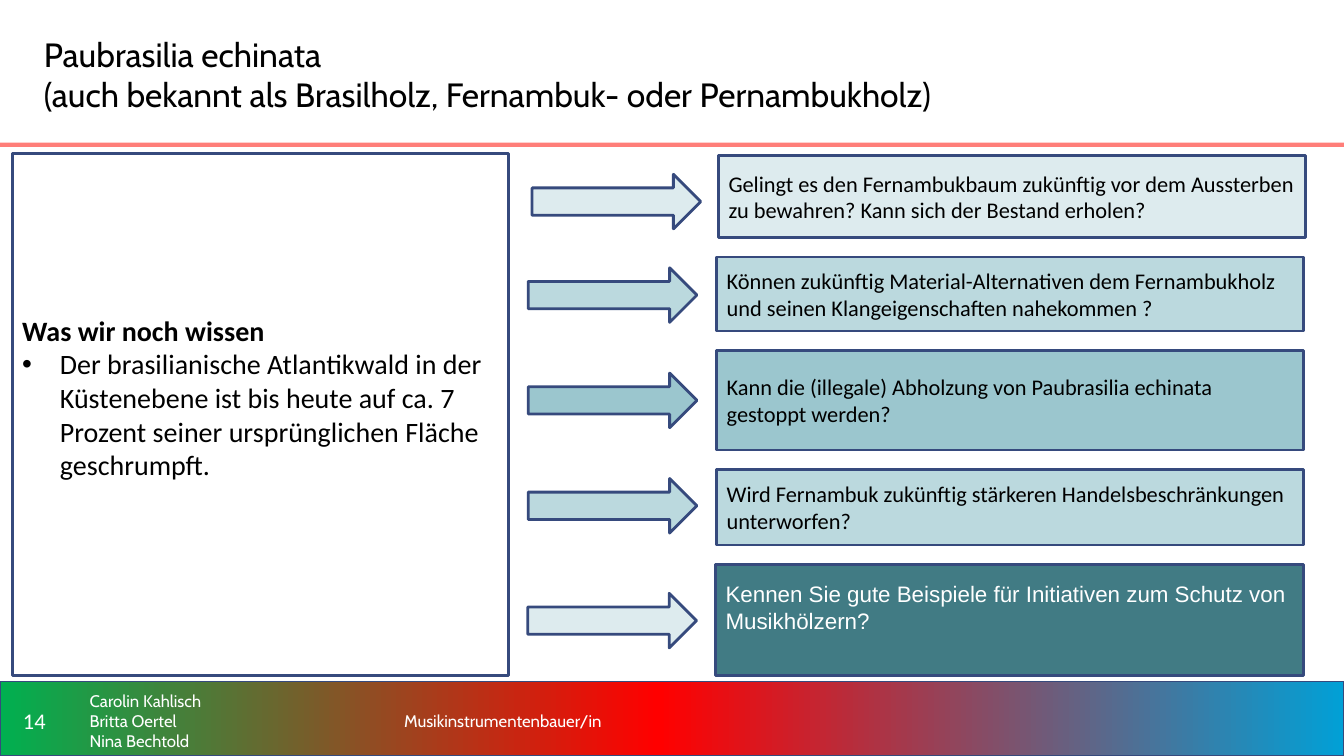
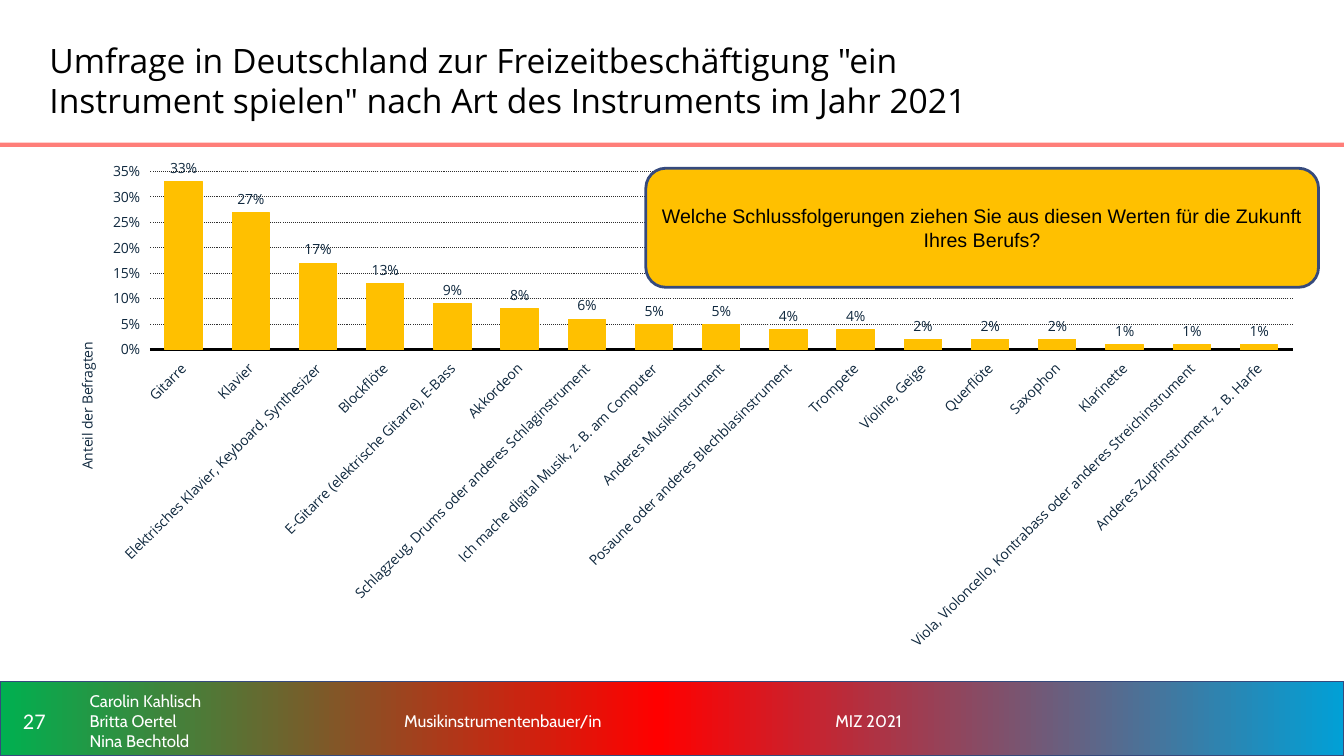
"""Build two slides on pernambuco wood and on instrument playing in Germany."""
from copy import deepcopy
from dataclasses import dataclass
from typing import Optional

from lxml import etree
from pptx import Presentation
from pptx import util as u
from pptx.chart import data as chart_data
from pptx.dml.color import RGBColor
from pptx.enum import chart as chart_enum
from pptx.enum import dml, shapes, text
from pptx.oxml import ns

WHITE = RGBColor(0xFF, 0xFF, 0xFF)
BLACK = RGBColor(0, 0, 0)
NAVY = RGBColor(0x36, 0x4A, 0x7D)
INK = RGBColor(0x0F, 0x28, 0x3E)
GRID = RGBColor(0x2F, 0x2F, 0x2F)
CORAL = RGBColor(0xFF, 0x7E, 0x79)
GREEN = RGBColor(0x00, 0xB0, 0x50)
RED = RGBColor(0xFF, 0x00, 0x00)
BLUE = RGBColor(0x01, 0xA0, 0xD6)
AMBER = RGBColor(0xFF, 0xC0, 0x00)
PALE = RGBColor(0xDD, 0xEB, 0xEE)
LIGHT = RGBColor(0xBB, 0xD9, 0xDE)
MEDIUM = RGBColor(0x9B, 0xC6, 0xCE)
DEEP = RGBColor(0x41, 0x7B, 0x84)

SLIDE_WIDTH, SLIDE_HEIGHT = 960, 540
FOOTER_TOP, FOOTER_HEIGHT = 492.5, 44
AUTHORS = ("Carolin Kahlisch", "Britta Oertel", "Nina Bechtold")
SHAPE = shapes.MSO_SHAPE
ALIGN = text.PP_ALIGN


@dataclass(frozen=True)
class Box:
    left: float
    top: float
    width: float
    height: float

    def lengths(self) -> tuple:
        return tuple(u.Pt(n) for n in (self.left, self.top, self.width, self.height))


@dataclass(frozen=True)
class Style:
    font: str
    size: float
    color: RGBColor = BLACK
    align: ALIGN = ALIGN.LEFT
    bold: bool = False


@dataclass(frozen=True)
class Question:
    wording: str
    box: Box
    arrow_left: float
    arrow_top: float
    fill: RGBColor
    arrow_fill: RGBColor
    style: Style = Style("Calibri", 16)
    bottom_inset: float = 3.6


FOOTER = Style("Cabin", 12, WHITE)
AXIS = Style("Open Sans", 10, INK)

QUESTIONS = (
    Question("Gelingt es den Fernambukbaum zukünftig vor dem Aussterben zu bewahren? Kann sich der Bestand erholen?",
             Box(513.3, 110.9, 419, 59), 380, 124.5, PALE, PALE),
    Question("Können zukünftig Material-Alternativen dem Fernambukholz und seinen Klangeigenschaften nahekommen ?",
             Box(512, 183.6, 419, 52.8), 377.3, 191.3, LIGHT, LIGHT),
    Question("Kann die (illegale) Abholzung von Paubrasilia echinata gestoppt werden?",
             Box(512, 250.5, 419, 71), 377.3, 266.5, MEDIUM, MEDIUM),
    Question("Wird Fernambuk zukünftig stärkeren Handelsbeschränkungen unterworfen?",
             Box(512, 335.3, 419, 54), 377.3, 341.8, LIGHT, LIGHT),
    Question("Kennen Sie gute Beispiele für Initiativen zum Schutz von Musikhölzern?",
             Box(511.2, 403.5, 419.8, 78.8), 377, 423.8, DEEP, PALE, Style("Arial", 16, WHITE), 22),
)

SHARES = {
    "Gitarre": 0.33,
    "Klavier": 0.27,
    "Elektrisches Klavier, Keyboard, Synthesizer": 0.17,
    "Blockflöte": 0.13,
    "E-Gitarre (elektrische Gitarre), E-Bass": 0.09,
    "Akkordeon": 0.08,
    "Schlagzeug, Drums oder anderes Schlaginstrument": 0.06,
    "Ich mache digital Musik, z. B. am Computer": 0.05,
    "Anderes Musikinstrument": 0.05,
    "Posaune oder anderes Blechblasinstrument": 0.04,
    "Trompete": 0.04,
    "Violine, Geige": 0.02,
    "Querflöte": 0.02,
    "Saxophon": 0.02,
    "Klarinette": 0.01,
    "Viola, Violoncello, Kontrabass oder anderes Streichinstrument": 0.01,
    "Anderes Zupfinstrument, z. B. Harfe": 0.01,
}


def set_font(font, style: Style) -> None:
    font.name, font.size, font.bold = style.font, u.Pt(style.size), style.bold
    font.color.rgb = style.color


def write(paragraph, wording: str, style: Style) -> None:
    paragraph.text = wording
    paragraph.alignment = style.align
    set_font(paragraph.font, style)


def hang(paragraph, left: float, first: float, bullet: Optional[str] = None) -> None:
    properties = paragraph._p.get_or_add_pPr()
    properties.set("marL", str(u.Pt(left)))
    properties.set("indent", str(u.Pt(first)))
    if bullet:
        etree.SubElement(properties, ns.qn("a:buFont")).set("typeface", "Arial")
        etree.SubElement(properties, ns.qn("a:buChar")).set("char", bullet)


def add_text(slide, box: Box, lines: tuple, style: Style):
    frame = slide.shapes.add_textbox(*box.lengths()).text_frame
    frame.word_wrap = True
    frame.vertical_anchor = text.MSO_ANCHOR.MIDDLE
    for index, line in enumerate(lines):
        write(frame.add_paragraph() if index else frame.paragraphs[0], line, style)
    return frame


def add_panel(slide, kind: SHAPE, box: Box, fill: Optional[RGBColor],
              line: Optional[RGBColor] = NAVY, weight: float = 2):
    shape = slide.shapes.add_shape(kind, *box.lengths())
    shape.shadow.inherit = False
    if fill is None:
        shape.fill.background()
    else:
        shape.fill.solid()
        shape.fill.fore_color.rgb = fill
    if line is None:
        shape.line.fill.background()
    else:
        shape.line.color.rgb = line
        shape.line.width = u.Pt(weight)
    shape.text_frame.word_wrap = True
    shape.text_frame.vertical_anchor = text.MSO_ANCHOR.MIDDLE
    return shape


def add_footer_band(slide) -> None:
    band = add_panel(slide, SHAPE.RECTANGLE, Box(0, 486.7, SLIDE_WIDTH, 53.3), None, NAVY, 1)
    band.fill.gradient()
    band.fill.gradient_angle = 0
    stops = band.element.spPr.find(".//" + ns.qn("a:gsLst"))
    stops.insert(1, deepcopy(stops[0]))
    for stop, position, color in zip(band.fill.gradient_stops, (0, 0.49, 1), (GREEN, RED, BLUE)):
        stop.position = position
        stop.color.rgb = color


def add_base_slide(presentation, number: int, title: str, title_box: Box, title_font: str,
                   notes: dict):
    slide = presentation.slides.add_slide(presentation.slide_layouts[6])
    add_footer_band(slide)
    add_panel(slide, SHAPE.RECTANGLE, Box(0, 102, SLIDE_WIDTH, 3), CORAL, None)
    add_text(slide, title_box, (title,), Style(title_font, 24))
    add_text(slide, Box(0, FOOTER_TOP, 49, FOOTER_HEIGHT), (str(number),),
             Style("Calibri", 16, WHITE, ALIGN.CENTER))
    add_text(slide, Box(57, FOOTER_TOP, 200, FOOTER_HEIGHT + 0.6), AUTHORS, FOOTER)
    for left, note in notes.items():
        paragraph = add_text(slide, Box(left, FOOTER_TOP, 302, FOOTER_HEIGHT), (note,), FOOTER).paragraphs[0]
        hang(paragraph, 36, -18)
        paragraph.line_spacing = 1.1
    return slide


def add_question(slide, question: Question) -> None:
    add_panel(slide, SHAPE.RIGHT_ARROW, Box(question.arrow_left, question.arrow_top, 120.5, 39),
              question.arrow_fill)
    frame = add_panel(slide, SHAPE.RECTANGLE, question.box, question.fill).text_frame
    frame.margin_bottom = u.Pt(question.bottom_inset)
    write(frame.paragraphs[0], question.wording, question.style)


def build_wood_slide(presentation) -> None:
    slide = add_base_slide(
        presentation, 14,
        "Paubrasilia echinata\n(auch bekannt als Brasilholz, Fernambuk- oder Pernambukholz)",
        Box(24.3, 10.3, 708.5, 85), "Cabin", {263.6: "Musikinstrumentenbauer/in"})
    frame = add_panel(slide, SHAPE.RECTANGLE, Box(8.7, 109.6, 354.5, 372.8), None).text_frame
    frame.margin_bottom = u.Pt(28)
    write(frame.paragraphs[0], "Was wir noch wissen", Style("Calibri", 20, bold=True))
    fact = frame.add_paragraph()
    hang(fact, 27, -27, "•")
    write(fact, "Der brasilianische Atlantikwald in der Küstenebene ist bis heute auf ca. 7 Prozent "
          "seiner ursprünglichen Fläche geschrumpft.", Style("Calibri", 20))
    for question in QUESTIONS:
        add_question(slide, question)


def set_layout(parent, index: int, **places) -> None:
    for old in parent.findall(ns.qn("c:layout")):
        parent.remove(old)
    layout = etree.Element(ns.qn("c:layout"))
    manual = etree.SubElement(layout, ns.qn("c:manualLayout"))
    for tag, value in places.items():
        etree.SubElement(manual, ns.qn("c:" + tag)).set("val", str(value))
    parent.insert(index, layout)


def add_share_chart(slide) -> None:
    data = chart_data.CategoryChartData(number_format="0%")
    data.categories = list(SHARES)
    data.add_series("Series 1", list(SHARES.values()))
    chart = slide.shapes.add_chart(chart_enum.XL_CHART_TYPE.COLUMN_CLUSTERED,
                                   *Box(34.5, 108, 907, 363.6).lengths(), data).chart
    chart.has_legend = chart.has_title = False
    set_font(chart.font, Style("Arial", 18))

    plot = chart.plots[0]
    plot.gap_width, plot.overlap, plot.vary_by_categories = 80, -30, False
    plot.has_data_labels = True
    labels = plot.data_labels
    labels.show_value = True
    labels.number_format, labels.number_format_is_linked = "0%", False
    labels.position = chart_enum.XL_LABEL_POSITION.OUTSIDE_END
    set_font(labels.font, AXIS)
    series = plot.series[0]
    series.format.fill.solid()
    series.format.fill.fore_color.rgb = AMBER
    series.format.line.color.rgb = AMBER
    series.format.line.width = u.Pt(0.75)

    for axis in (chart.category_axis, chart.value_axis):
        axis.major_tick_mark = axis.minor_tick_mark = chart_enum.XL_TICK_MARK.NONE
        axis.tick_label_position = chart_enum.XL_TICK_LABEL_POSITION.LOW
        set_font(axis.tick_labels.font, AXIS)
    chart.category_axis.format.line.color.rgb = BLACK
    chart.category_axis.format.line.width = u.Pt(2)
    label_body = chart.element.find(".//" + "/".join(map(ns.qn, ("c:catAx", "c:txPr", "a:bodyPr"))))
    label_body.set("rot", "-2700000")

    value_axis = chart.value_axis
    value_axis.minimum_scale, value_axis.maximum_scale, value_axis.major_unit = 0, 0.35, 0.05
    value_axis.tick_labels.number_format = "#,##0%"
    value_axis.tick_labels.number_format_is_linked = False
    value_axis.format.line.fill.background()
    grid_line = value_axis.major_gridlines.format.line
    grid_line.color.rgb, grid_line.width = GRID, u.Pt(0.75)
    grid_line.dash_style = dml.MSO_LINE.ROUND_DOT
    write(value_axis.axis_title.text_frame.paragraphs[0], "Anteil der Befragten", AXIS)

    set_layout(value_axis.axis_title.element, 1, xMode="edge", yMode="edge", x=0.02, y=0.37)
    set_layout(chart.element.find(".//" + ns.qn("c:plotArea")), 0, layoutTarget="inner",
               xMode="edge", yMode="edge", x=0.08, y=0.04, w=0.9, h=0.35)


def build_survey_slide(presentation) -> None:
    slide = add_base_slide(
        presentation, 27,
        "Umfrage in Deutschland zur Freizeitbeschäftigung \"ein Instrument spielen\" "
        "nach Art des Instruments im Jahr 2021",
        Box(28.3, 14.5, 708.5, 85), "Open Sans",
        {263.6: "Musikinstrumentenbauer/in", 571.7: "MIZ 2021"})
    add_share_chart(slide)
    callout = add_panel(slide, SHAPE.ROUNDED_RECTANGLE, Box(461.3, 120.2, 480.5, 85), AMBER)
    write(callout.text_frame.paragraphs[0],
          "Welche Schlussfolgerungen ziehen Sie aus diesen Werten für die Zukunft Ihres Berufs?",
          Style("Arial", 14, align=ALIGN.CENTER))


def main() -> None:
    presentation = Presentation()
    presentation.slide_width, presentation.slide_height = u.Pt(SLIDE_WIDTH), u.Pt(SLIDE_HEIGHT)
    build_wood_slide(presentation)
    build_survey_slide(presentation)
    presentation.save("out.pptx")


if __name__ == "__main__":
    main()
